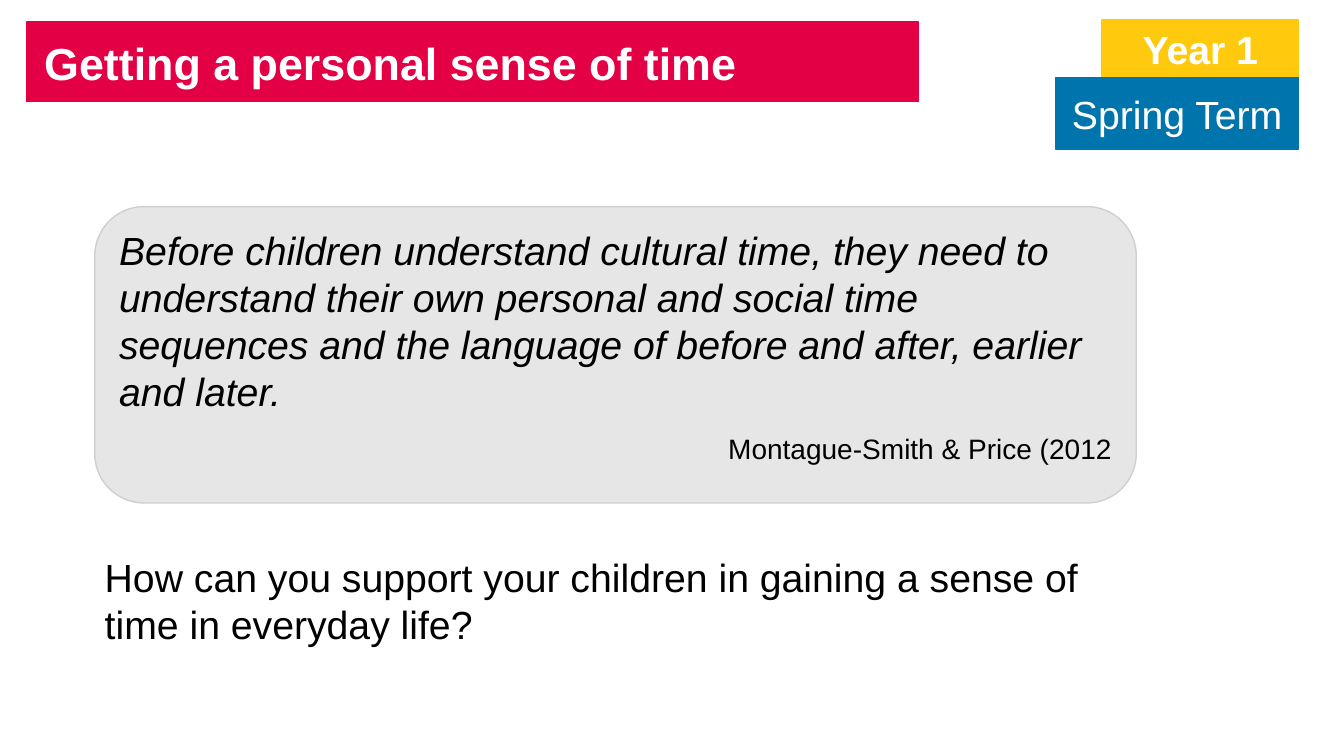
from pptx import Presentation
from pptx.dml.color import RGBColor
from pptx.enum.shapes import MSO_SHAPE
from pptx.enum.text import MSO_ANCHOR, PP_ALIGN
from pptx.util import Inches, Pt

RECT, ROUND = MSO_SHAPE.RECTANGLE, MSO_SHAPE.ROUNDED_RECTANGLE
TOP, MIDDLE = MSO_ANCHOR.TOP, MSO_ANCHOR.MIDDLE
LEFT, CENTER, RIGHT = PP_ALIGN.LEFT, PP_ALIGN.CENTER, PP_ALIGN.RIGHT

COLORS = {
    "red": "E40045", "gold": "FFC90D", "blue": "0074AC",
    "grey": "E7E6E6", "edge": "D0CECE", "white": "FFFFFF", "black": "000000",
}

TITLE = [("Getting a personal sense of time", 32, "white", LEFT, True, False, 0)]
YEAR = [("Year 1", 28, "white", CENTER, True, False, 0)]
TERM = [("Spring Term", 28, "white", CENTER, False, False, 0)]
PROMPT = [("How can you support your children in gaining a sense of time in everyday life?",
           28, "black", LEFT, False, False, 0)]
QUOTE = [
    ("Before children understand cultural time, they need to understand their own "
     "personal and social time sequences and the language of before and after, "
     "earlier and later.", 28, "black", LEFT, False, True, 0),
    ("Montague-Smith & Price (2012", 20, "black", RIGHT, False, False, 12),
]

PANELS = [
    (RECT, (0.26, 0.22, 8.85, 0.79), "red", "red", TOP, []),
    (RECT, (10.93, 0.2, 1.95, 0.57), "gold", "gold", TOP, YEAR),
    (RECT, (10.47, 0.77, 2.41, 0.71), "blue", "blue", MIDDLE, TERM),
    (ROUND, (0.94, 2.05, 10.33, 2.94), "grey", "edge", TOP, QUOTE),
]
BOXES = [
    ((0.94, 5.44, 10.45, 1.04), PROMPT),
    ((0.34, 0.31, 9.77, 0.64), TITLE),
]


def color(name):
    return RGBColor.from_string(COLORS[name])


def write(shape, lines, anchor):
    frame = shape.text_frame
    frame.word_wrap = True
    frame.vertical_anchor = anchor
    frame.text = "\n".join(line[0] for line in lines)
    for para, line in zip(frame.paragraphs, lines):
        _, size, ink, align, bold, slant, gap = line
        para.alignment = align
        para.space_before = Pt(gap)
        font = para.runs[0].font
        font.name, font.size = "Arial", Pt(size)
        font.bold, font.italic = bold, slant
        font.color.rgb = color(ink)


def main():
    deck = Presentation()
    deck.slide_width, deck.slide_height = Inches(13.33), Inches(7.5)
    shapes = deck.slides.add_slide(deck.slide_layouts[6]).shapes

    for kind, place, fill, edge, anchor, lines in PANELS:
        panel = shapes.add_shape(kind, *map(Inches, place))
        panel.shadow.inherit = False
        panel.fill.solid()
        panel.fill.fore_color.rgb = color(fill)
        panel.line.color.rgb = color(edge)
        panel.line.width = Pt(1)
        write(panel, lines, anchor)

    for place, lines in BOXES:
        write(shapes.add_textbox(*map(Inches, place)), lines, TOP)

    deck.save("out.pptx")


if __name__ == "__main__":
    main()
